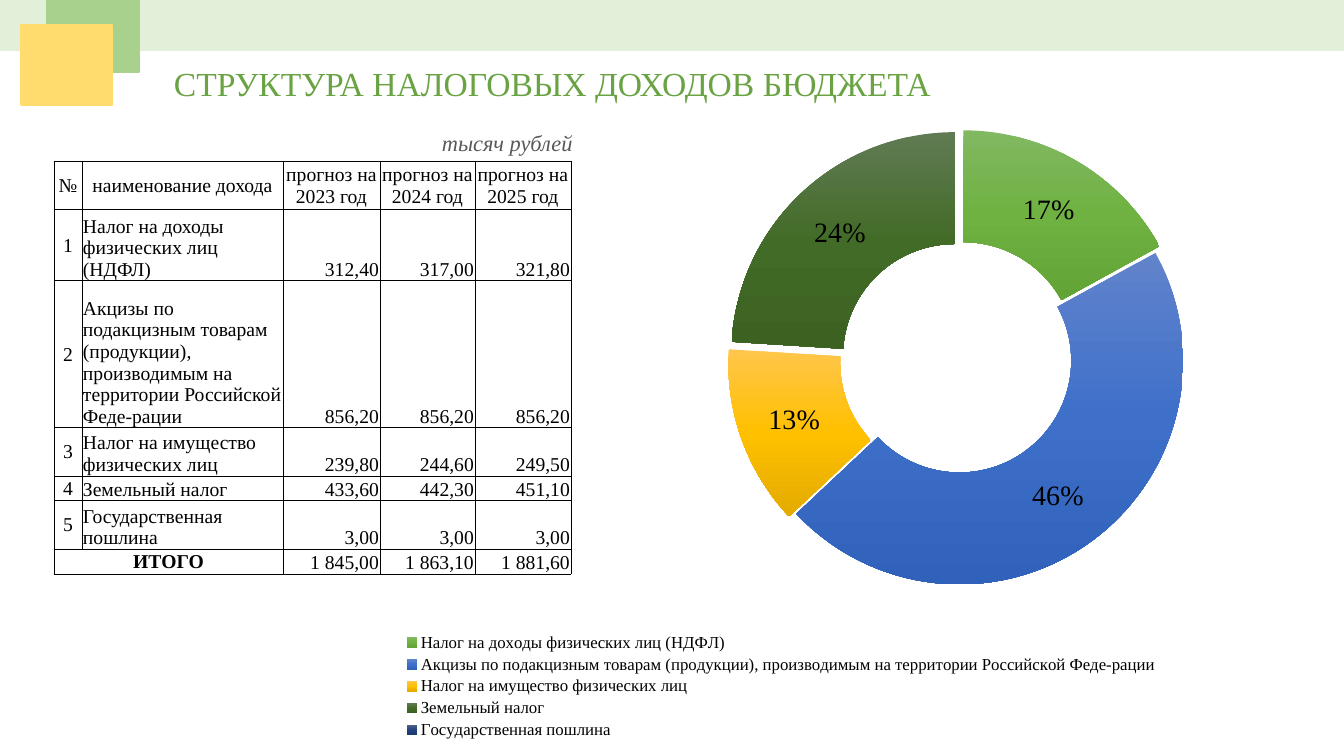
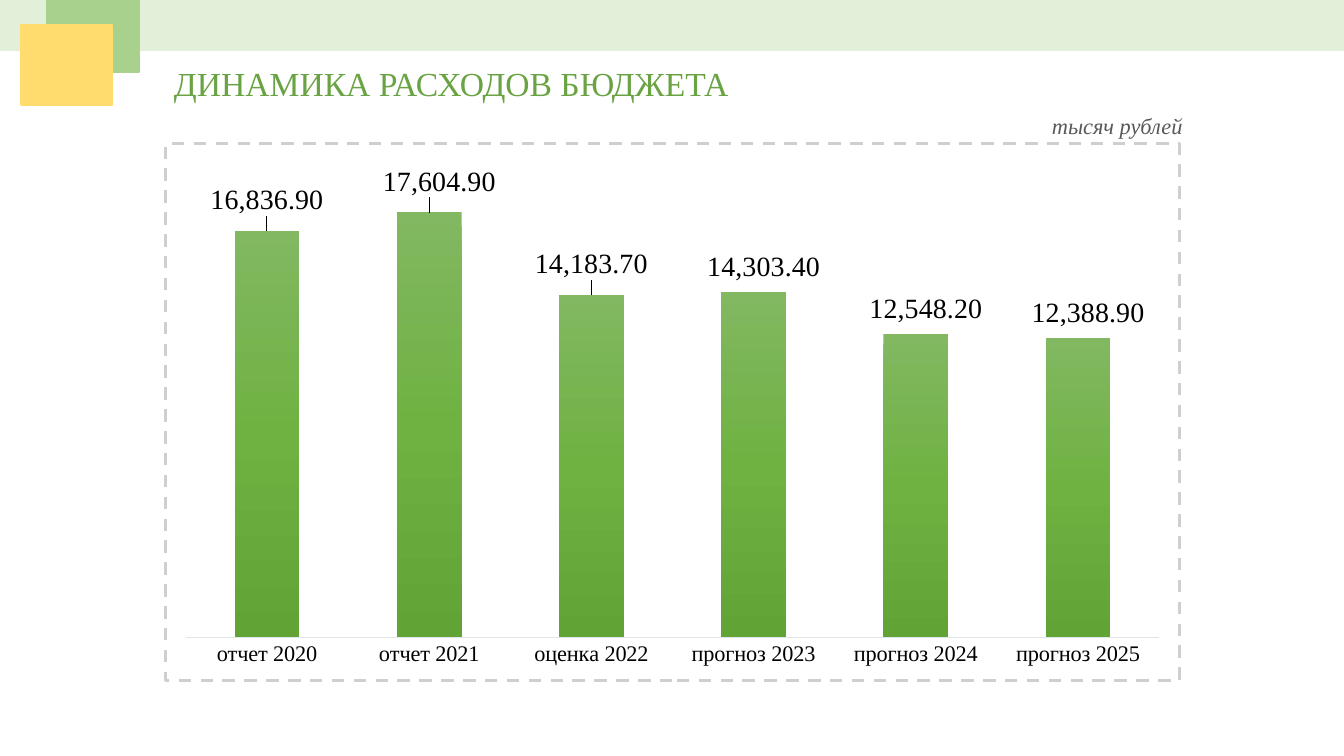
import pptx
import pptx.chart.data
import pptx.dml.color
import pptx.enum.chart
import pptx.enum.shapes
import pptx.enum.text
import pptx.oxml
import pptx.oxml.ns
import pptx.util

RGB = pptx.dml.color.RGBColor
ALIGN = pptx.enum.text.PP_ALIGN
ANCHOR = pptx.enum.text.MSO_ANCHOR
CHART = pptx.enum.chart
PT = pptx.util.Pt
qn = pptx.oxml.ns.qn

PAGE_WIDTH, PAGE_HEIGHT = 1344, 756
EMU_PER_PX = 12192000 / PAGE_WIDTH

BLACK = RGB(0x00, 0x00, 0x00)
GRAY = RGB(0x59, 0x59, 0x59)
AXIS_GRAY = RGB(0xE0, 0xE5, 0xEB)
BORDER_GRAY = RGB(0xD0, 0xCE, 0xCE)
TITLE_GREEN = RGB(0x6A, 0xA3, 0x43)
PALE_GREEN = RGB(0xE2, 0xF0, 0xD9)
LIGHT_GREEN = RGB(0xA9, 0xD1, 0x8E)
YELLOW = RGB(0xFF, 0xDC, 0x6D)

# Each gradient runs from top to bottom through three colours.
GREEN_GRADIENT = RGB(0x81, 0xB8, 0x61), RGB(0x6F, 0xB2, 0x42), RGB(0x62, 0xA3, 0x36)
BLUE_GRADIENT = RGB(0x61, 0x83, 0xCB), RGB(0x3E, 0x70, 0xCA), RGB(0x30, 0x62, 0xBB)
GOLD_GRADIENT = RGB(0xFF, 0xC6, 0x4B), RGB(0xFF, 0xC0, 0x00), RGB(0xE3, 0xAB, 0x00)
FOREST_GRADIENT = RGB(0x60, 0x7B, 0x53), RGB(0x43, 0x6B, 0x28), RGB(0x3B, 0x62, 0x20)
NAVY_GRADIENT = RGB(0x51, 0x60, 0x89), RGB(0x22, 0x42, 0x7D), RGB(0x1A, 0x3A, 0x72)

UNITS = "тысяч рублей"
NUMBER_FORMAT = "#,##0.00"

TAX_HEADER = ["№", "наименование дохода", "прогноз на 2023 год",
              "прогноз на 2024 год", "прогноз на 2025 год"]
TAX_ROWS = [
    ["Налог на доходы физических лиц (НДФЛ)", "312,40", "317,00", "321,80"],
    ["Акцизы по подакцизным товарам (продукции), производимым на территории "
     "Российской Феде-рации", "856,20", "856,20", "856,20"],
    ["Налог на имущество физических лиц", "239,80", "244,60", "249,50"],
    ["Земельный налог", "433,60", "442,30", "451,10"],
    ["Государственная пошлина", "3,00", "3,00", "3,00"],
]
TAX_TOTAL = ["ИТОГО", "", "1 845,00", "1 863,10", "1 881,60"]
TAX_SHARES = [17, 46, 13, 24, 0]
SLICE_GRADIENTS = [GREEN_GRADIENT, BLUE_GRADIENT, GOLD_GRADIENT, FOREST_GRADIENT, NAVY_GRADIENT]
SLICE_EXPLOSIONS = [7, 0, 7, 6, 0]

SPENDING = {
    "отчет 2020": 16836.9, "отчет 2021": 17604.9, "оценка 2022": 14183.7,
    "прогноз 2023": 14303.4, "прогноз 2024": 12548.2, "прогноз 2025": 12388.9,
}
# Shift of each bar label from its usual place, as shares of the chart size.
LABEL_SHIFTS = [(0, -0.02), (0.01, -0.02), (0, -0.02), (0.01, -0.01), (0.01, -0.01), (0.01, -0.01)]


def emu(px):
    return round(px * EMU_PER_PX)


def make(tag, parent=None, **attributes):
    """Create an XML element, inside parent if one is given."""
    node = pptx.oxml.parse_xml(f"<{tag} {pptx.oxml.ns.nsdecls('a', 'c')}/>")
    for name, value in attributes.items():
        node.set(name, str(value))
    if parent is not None:
        parent.append(node)
    return node


def make_line(tag, color, width, dash="solid"):
    line = make(tag, w=PT(width))
    make("a:srgbClr", make("a:solidFill", line), val=color)
    make("a:prstDash", line, val=dash)
    return line


def make_layout(**settings):
    layout = make("c:layout")
    manual = make("c:manualLayout", layout)
    for name, value in settings.items():
        make(f"c:{name}", manual, val=value)
    return layout


def paint_gradients(series, gradients):
    """Give the gradient fills of a series their colours, in order."""
    for fill, colors in zip(series._element.iter(qn("a:gradFill")), gradients):
        for child in list(fill):
            fill.remove(child)
        stops = make("a:gsLst", fill)
        for position, color in zip((0, 50000, 100000), colors):
            make("a:srgbClr", make("a:gs", stops, pos=position), val=color)
        make("a:lin", fill, ang=5400000, scaled=0)


class Deck:
    FONT = "Times New Roman"

    def __init__(self):
        self.presentation = pptx.Presentation()
        self.presentation.slide_width = emu(PAGE_WIDTH)
        self.presentation.slide_height = emu(PAGE_HEIGHT)
        self.page = None

    def style(self, font, size, color=BLACK, **flags):
        font.name, font.size = self.FONT, PT(size)
        font.color.rgb = color
        for name, value in flags.items():
            setattr(font, name, value)

    def add_page(self, title, title_width):
        self.page = self.presentation.slides.add_slide(self.presentation.slide_layouts[6])
        self.add_text(title, 164, 58, title_width, 50, 24, TITLE_GREEN)
        self.add_block(0, 0, PAGE_WIDTH, 50, PALE_GREEN)
        self.add_block(47, 0, 92, 72, LIGHT_GREEN)
        self.add_block(21, 25, 91, 80, YELLOW)

    def add_block(self, left, top, width, height, color):
        block = self.page.shapes.add_shape(
            pptx.enum.shapes.MSO_SHAPE.RECTANGLE, *map(emu, (left, top, width, height)))
        block.shadow.inherit = False
        block.fill.solid()
        block.fill.fore_color.rgb = color
        block.line.color.rgb = color
        block.line.width = PT(1)

    def add_text(self, text, left, top, width, height, size, color, **flags):
        box = self.page.shapes.add_textbox(*map(emu, (left, top, width, height)))
        box.text_frame.word_wrap = False
        box.text_frame.auto_size = pptx.enum.text.MSO_AUTO_SIZE.SHAPE_TO_FIT_TEXT
        box.text_frame.text = text
        self.style(box.text_frame.paragraphs[0].font, size, color, **flags)

    def add_units(self, left, top):
        self.add_text(UNITS, left, top, 153, 37, 16, GRAY, italic=True)

    def add_table(self, rows, left, top, widths, heights):
        """Draw a ruled table whose last row is a total."""
        frame = self.page.shapes.add_table(
            len(rows), len(widths), *map(emu, (left, top, sum(widths), sum(heights))))
        table = frame.table
        table.first_row = table.horz_banding = False
        for column, width in zip(table.columns, widths):
            column.width = emu(width)
        for row, height in zip(table.rows, heights):
            row.height = emu(height)
        last = len(rows) - 1
        table.cell(last, 0).merge(table.cell(last, 1))
        for i, texts in enumerate(rows):
            for j, text in enumerate(texts):
                self.fill_cell(table.cell(i, j), text, i == 0 or j == 0,
                               ALIGN.LEFT if j == 1 else ALIGN.RIGHT, i == last and j == 0)

    def fill_cell(self, cell, text, centered, align, bold):
        cell.margin_left = cell.margin_right = cell.margin_top = emu(1)
        cell.margin_bottom = 0
        cell.vertical_anchor = ANCHOR.MIDDLE if centered else ANCHOR.BOTTOM
        cell.fill.background()
        properties = cell._tc.get_or_add_tcPr()
        for index, side in enumerate("LRTB"):
            properties.insert(index, make_line(f"a:ln{side}", BLACK, 0.5))
        cell.text = text
        para = cell.text_frame.paragraphs[0]
        para.alignment = ALIGN.CENTER if centered else align
        self.style(para.font, 14, bold=bold)

    def add_chart(self, kind, categories, values, area, plot_area, border=None):
        """Add a one-series chart; plot_area is x, y, w, h as shares of the chart."""
        data = pptx.chart.data.CategoryChartData(number_format=NUMBER_FORMAT)
        data.categories = categories
        data.add_series("Series 1", values)
        chart = self.page.shapes.add_chart(kind, *map(emu, area), data).chart
        chart.has_title = chart.has_legend = False
        chart.font.name, chart.font.size = "Calibri", PT(10)
        chart.font.color.rgb = BLACK

        properties = make("c:spPr")
        make("a:noFill", properties)
        if border is None:
            make("a:noFill", make("a:ln", properties))
        else:
            properties.append(border)
        space = chart._chartSpace
        space.find(qn("c:chart")).addnext(properties)

        plot_element = next(space.iter(qn("c:plotArea")))
        for old in plot_element.findall(qn("c:layout")):
            plot_element.remove(old)
        x, y, w, h = plot_area
        plot_element.insert(0, make_layout(layoutTarget="inner", xMode="edge", yMode="edge",
                                           x=x, y=y, w=w, h=h))
        return chart

    def add_doughnut(self, categories, values, area, plot_area):
        chart = self.add_chart(CHART.XL_CHART_TYPE.DOUGHNUT, categories, values, area, plot_area)
        chart.has_legend = True
        chart.legend.position = CHART.XL_LEGEND_POSITION.BOTTOM
        chart.legend.include_in_layout = False
        self.style(chart.legend.font, 12)
        plot = chart.plots[0]
        plot.vary_by_categories = True
        series = plot.series[0]
        for index, explosion in enumerate(SLICE_EXPLOSIONS):
            point = series.points[index]
            point.format.fill.gradient()
            point.format.line.fill.background()
            if explosion:
                shape_properties = list(series._element.iter(qn("c:dPt")))[index].find(qn("c:spPr"))
                shape_properties.addprevious(make("c:explosion", val=explosion))
        paint_gradients(series, SLICE_GRADIENTS)
        labels = series.data_labels
        labels.show_value, labels.show_percentage = False, True
        labels.number_format, labels.number_format_is_linked = "0%", False
        self.style(labels.font, 20)

    def add_columns(self, values, area, plot_area):
        border = make_line("a:ln", BORDER_GRAY, 2.25, "dash")
        chart = self.add_chart(CHART.XL_CHART_TYPE.COLUMN_CLUSTERED, list(values),
                               list(values.values()), area, plot_area, border)
        value_axis, category_axis = chart.value_axis, chart.category_axis
        value_axis.minimum_scale, value_axis.maximum_scale = 0, 20000
        value_axis.has_major_gridlines = value_axis.visible = False
        category_axis.major_tick_mark = CHART.XL_TICK_MARK.NONE
        category_axis.format.line.color.rgb = AXIS_GRAY
        category_axis.format.line.width = PT(0.75)
        self.style(category_axis.tick_labels.font, 16)
        plot = chart.plots[0]
        plot.vary_by_categories = False
        plot.gap_width = 150
        series = plot.series[0]
        series.format.fill.gradient()
        paint_gradients(series, [GREEN_GRADIENT])
        labels = series.data_labels
        labels.show_value = True
        labels.number_format, labels.number_format_is_linked = NUMBER_FORMAT, False
        self.style(labels.font, 20)
        for index, (x, y) in enumerate(LABEL_SHIFTS):
            label = series.points[index].data_label
            self.style(label.font, 20)
            label.position = CHART.XL_LABEL_POSITION.OUTSIDE_END
            element = list(series._element.iter(qn("c:dLbl")))[index]
            element.insert(1, make_layout(x=x, y=y))
            element.insert(2, make("c:numFmt", formatCode=NUMBER_FORMAT, sourceLinked=0))


def main():
    deck = Deck()

    deck.add_page("СТРУКТУРА НАЛОГОВЫХ ДОХОДОВ БЮДЖЕТА", 785)
    numbered = [[str(number), *row] for number, row in enumerate(TAX_ROWS, 1)]
    deck.add_table([TAX_HEADER, *numbered, TAX_TOTAL], 54, 161,
                   [28, 201, 97, 95, 96], [48, 71, 147, 48, 25, 48, 25])
    deck.add_units(432, 124)
    deck.add_doughnut([row[0] for row in TAX_ROWS], TAX_SHARES,
                      (325, 106, 913, 637), (0.45, 0.03, 0.49, 0.74))

    deck.add_page("ДИНАМИКА РАСХОДОВ БЮДЖЕТА", 590)
    deck.add_columns(SPENDING, (164, 142, 1017, 540), (0.02, 0.02, 0.96, 0.9))
    deck.add_units(1042, 107)

    deck.presentation.save("out.pptx")


if __name__ == "__main__":
    main()
